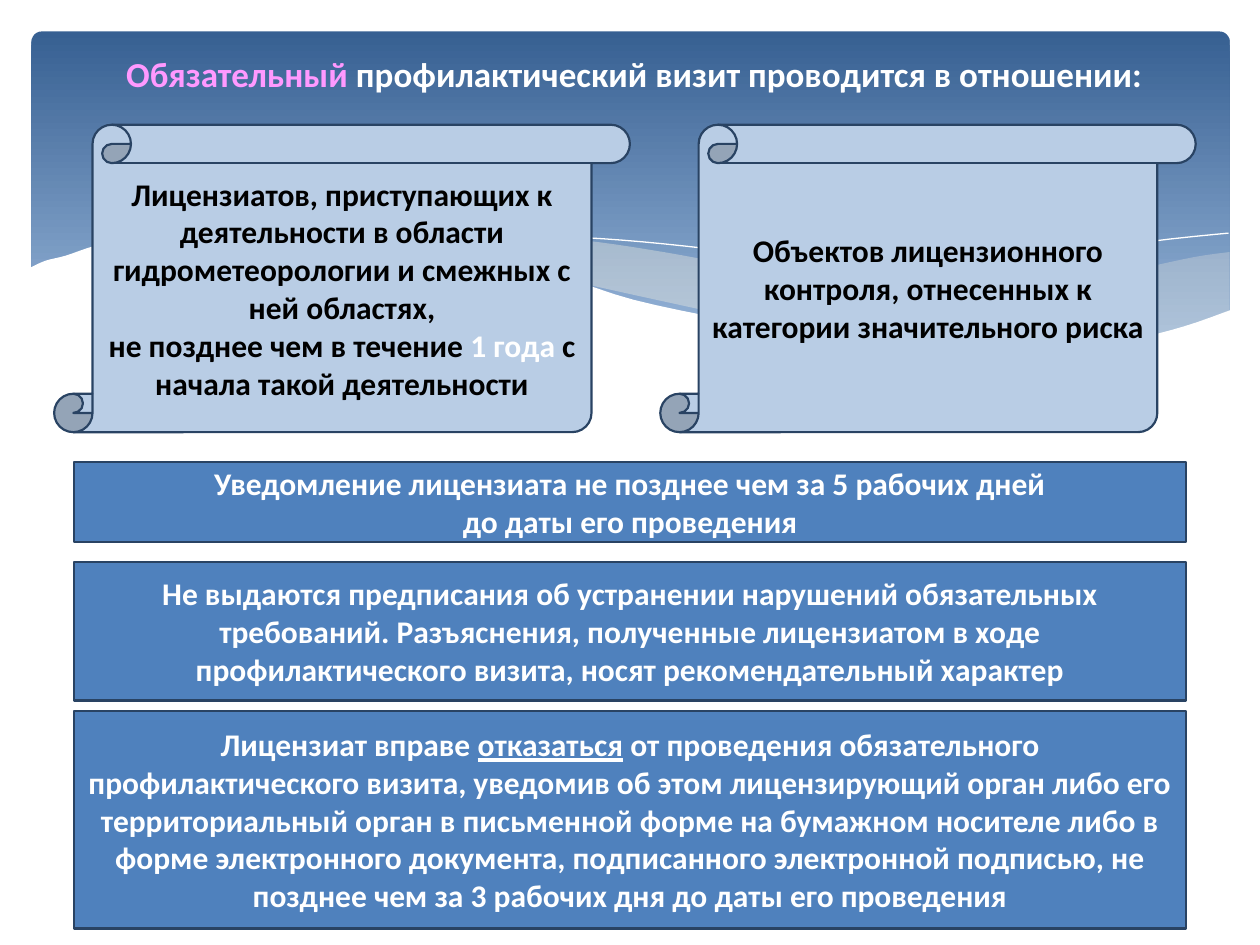
from lxml import etree
from pptx import Presentation, util as u
from pptx.dml.color import RGBColor
from pptx.enum import shapes as s, text as t
from pptx.oxml.ns import qn

# Grid: 100 columns by 75 rows of square cells
CELL = u.Inches(0.1)
FONT = "Calibri"

WHITE = RGBColor(0xFF, 0xFF, 0xFF)
BLACK = RGBColor(0, 0, 0)
PINK = RGBColor(0xFF, 0x99, 0xFF)
DEEP = RGBColor(0x37, 0x60, 0x92)
SKY = RGBColor(0x95, 0xB3, 0xD7)
CREAM = RGBColor(0xEE, 0xEC, 0xE1)
PALE = RGBColor(0xB9, 0xCD, 0xE5)
BLUE = RGBColor(0x4F, 0x81, 0xBD)
EDGE = RGBColor(0x29, 0x43, 0x63)

# Curves of the header band, in cells from its top left corner
RIGHT_TOP = [(95.1, 17.5), (92.3, 17.9), (88.1, 18.8), (83.6, 19.8),
             (75.4, 21.7), (68.1, 23.2), (63.6, 24)]
RIGHT_LOW = [(63.6, 24), (66.6, 24.4), (70.7, 24.9), (75.6, 25.2), (80, 25.3),
             (84.2, 25.2), (88, 24.8), (91.7, 24.1), (95.1, 22.2)]
MID_TOP = [(86.8, 24.8), (81.2, 24), (75, 22.9), (68.1, 21.5), (60.4, 19.7),
           (54.4, 18.3), (48.9, 17.3), (44, 16.6), (39.5, 16.2), (33.6, 16),
           (30.3, 16.2), (26.1, 16.6)]
MID_LOW = [(26.1, 16.6), (31.7, 17.4), (37.9, 18.6), (42.4, 19.7), (50.5, 21.5),
           (57.6, 23), (64, 24.1), (69.7, 24.9), (74.8, 25.2), (79.3, 25.3),
           (83.2, 25.2), (86.8, 24.8)]
FALL = [(28.4, 17), (32.8, 16.4), (37.6, 16.2), (42.5, 16.3), (48.5, 16.7),
        (55.7, 17.5), (64, 18.8), (73.5, 20.8), (80.6, 22.6), (88.2, 24.7)]
RISE = [(58.8, 23.2), (64.7, 21.6), (72.3, 19.8), (81.1, 17.9), (88.5, 16.7),
        (95, 16)]
SHORE = [(95.2, 22.1), (91.5, 23.4), (87.4, 24.4), (82.5, 25), (75.9, 25.2),
         (69.1, 24.9), (62.3, 24), (55.4, 22.9), (47.8, 21.3), (42.2, 19.5),
         (36.6, 18.2), (29.1, 16.9), (22.5, 16.1), (16.8, 15.9), (12.1, 16),
         (8.1, 16.4), (5.1, 17), (2.7, 17.8), (1.1, 18.2), (-0.2, 18.8)]
BASE = [(-0.2, 30.4), (95.2, 30.4)]


def cells(*nums):
    return [round(n * CELL) for n in nums]


def curve(knots, steps=4):
    """Smooth path through the knots (Catmull-Rom)."""
    ends = [knots[0], *knots, knots[-1]]
    path = []
    for a, b, c, d in zip(ends, ends[1:], ends[2:], ends[3:]):
        for k in range(steps):
            f = k / steps
            path.append(tuple(
                q + f * (r - p) / 2
                + f ** 2 * (2 * p - 5 * q + 4 * r - v) / 2
                + f ** 3 * (3 * q - p - 3 * r + v) / 2
                for p, q, r, v in zip(a, b, c, d)))
    return path + [knots[-1]]


def trace(slide, box, path, close):
    """Freeform whose points count from the corner of the box."""
    pts = [cells(box[0] + x, box[1] + y) for x, y in path]
    pen = slide.shapes.build_freeform(*pts[0])
    pen.add_line_segments(pts[1:], close=close)
    form = pen.convert_to_shape()
    form.shadow.inherit = False
    return form


def area(slide, box, path, color, alpha=100):
    form = trace(slide, box, path, True)
    form.fill.solid()
    form.fill.fore_color.rgb = color
    form.line.fill.background()
    if alpha < 100:
        tint = form.element.find(".//" + qn("a:srgbClr"))
        etree.SubElement(tint, qn("a:alpha"), val=str(alpha * 1000))


def thread(slide, box, path):
    form = trace(slide, box, path, False)
    form.fill.background()
    form.line.color.rgb = WHITE
    form.line.width = u.Pt(0)


def band(slide, box):
    """Gradient header with its waves."""
    panel = slide.shapes.add_shape(s.MSO_SHAPE.ROUNDED_RECTANGLE, *cells(*box))
    panel.adjustments[0] = 0.03
    panel.shadow.inherit = False
    panel.line.fill.background()
    panel.fill.gradient()
    panel.fill.gradient_angle = 270
    for stop, color, pos in zip(panel.fill.gradient_stops, (DEEP, SKY), (0, 0.9)):
        stop.color.rgb = color
        stop.position = pos
    area(slide, box, curve(RIGHT_TOP) + curve(RIGHT_LOW), CREAM, 29)
    area(slide, box, curve(MID_TOP) + curve(MID_LOW), CREAM, 40)
    thread(slide, box, curve(FALL))
    thread(slide, box, curve(RISE))
    area(slide, box, curve(SHORE) + BASE, WHITE)


def write(frame, paras, size):
    """Each paragraph is a list of (words, color, underline) pieces."""
    frame.word_wrap = True
    frame.auto_size = t.MSO_AUTO_SIZE.NONE
    frame.vertical_anchor = t.MSO_ANCHOR.MIDDLE
    for i, parts in enumerate(paras):
        para = frame.add_paragraph() if i else frame.paragraphs[0]
        para.alignment = t.PP_ALIGN.CENTER
        for words, color, *under in parts:
            run = para.add_run()
            run.text = words
            font = run.font
            font.name, font.size, font.bold = FONT, u.Pt(size), True
            font.color.rgb = color
            if under:
                font.underline = True


def head(slide, box, parts):
    """Title placeholder, brought in front of the band."""
    title = slide.shapes.title
    title.left, title.top, title.width, title.height = cells(*box)
    write(title.text_frame, [parts], 20)
    title.element.getparent().append(title.element)


def card(slide, kind, box, color, paras):
    """Outlined shape with centred text."""
    form = slide.shapes.add_shape(kind, *cells(*box))
    form.shadow.inherit = False
    form.fill.solid()
    form.fill.fore_color.rgb = color
    form.line.color.rgb = EDGE
    form.line.width = u.Pt(1.25)
    write(form.text_frame, paras, 18)


SCROLLS = [
    (52.4, 42.5, [[("Объектов лицензионного контроля, отнесенных к категории "
                    "значительного риска", BLACK)]]),
    (4.3, 45.7, [[("Лицензиатов, приступающих к деятельности в области "
                   "гидрометеорологии и смежных с ней областях,", BLACK)],
                 [("не позднее чем в течение ", BLACK), ("1 года", WHITE),
                  (" с начала такой деятельности", BLACK)]]),
]
BARS = [
    (36.7, 6.3, [[("Уведомление лицензиата не позднее чем за 5 рабочих дней", WHITE)],
                 [("до даты его проведения", WHITE)]]),
    (44.6, 11, [[("Не выдаются предписания об устранении нарушений обязательных "
                  "требований. Разъяснения, полученные лицензиатом в ходе "
                  "профилактического визита, носят рекомендательный характер",
                  WHITE)]]),
    (56.4, 17.3, [[("Лицензиат вправе ", WHITE), ("отказаться", WHITE, True),
                   (" от проведения обязательного профилактического визита, "
                    "уведомив об этом лицензирующий орган либо его "
                    "территориальный орган в письменной форме на бумажном "
                    "носителе либо в форме электронного документа, подписанного "
                    "электронной подписью, не позднее чем за 3 рабочих дня до "
                    "даты его проведения", WHITE)]]),
]


def main():
    deck = Presentation()
    deck.slide_width, deck.slide_height = cells(100, 75)
    slide = deck.slides.add_slide(deck.slide_layouts[5])
    band(slide, (2.5, 2.5, 95.1, 27))
    head(slide, (3.5, 3.6, 93.7, 4.4),
         [("Обязательный ", PINK),
          ("профилактический визит проводится в отношении:", WHITE)])
    # Who is visited
    for left, wide, paras in SCROLLS:
        card(slide, s.MSO_SHAPE.VERTICAL_SCROLL, (left, 9.9, wide, 24.4), PALE, paras)
    # Rules of the visit
    for top, tall, paras in BARS:
        card(slide, s.MSO_SHAPE.RECTANGLE, (5.9, top, 88.2, tall), BLUE, paras)
    deck.save("out.pptx")


if __name__ == "__main__":
    main()
